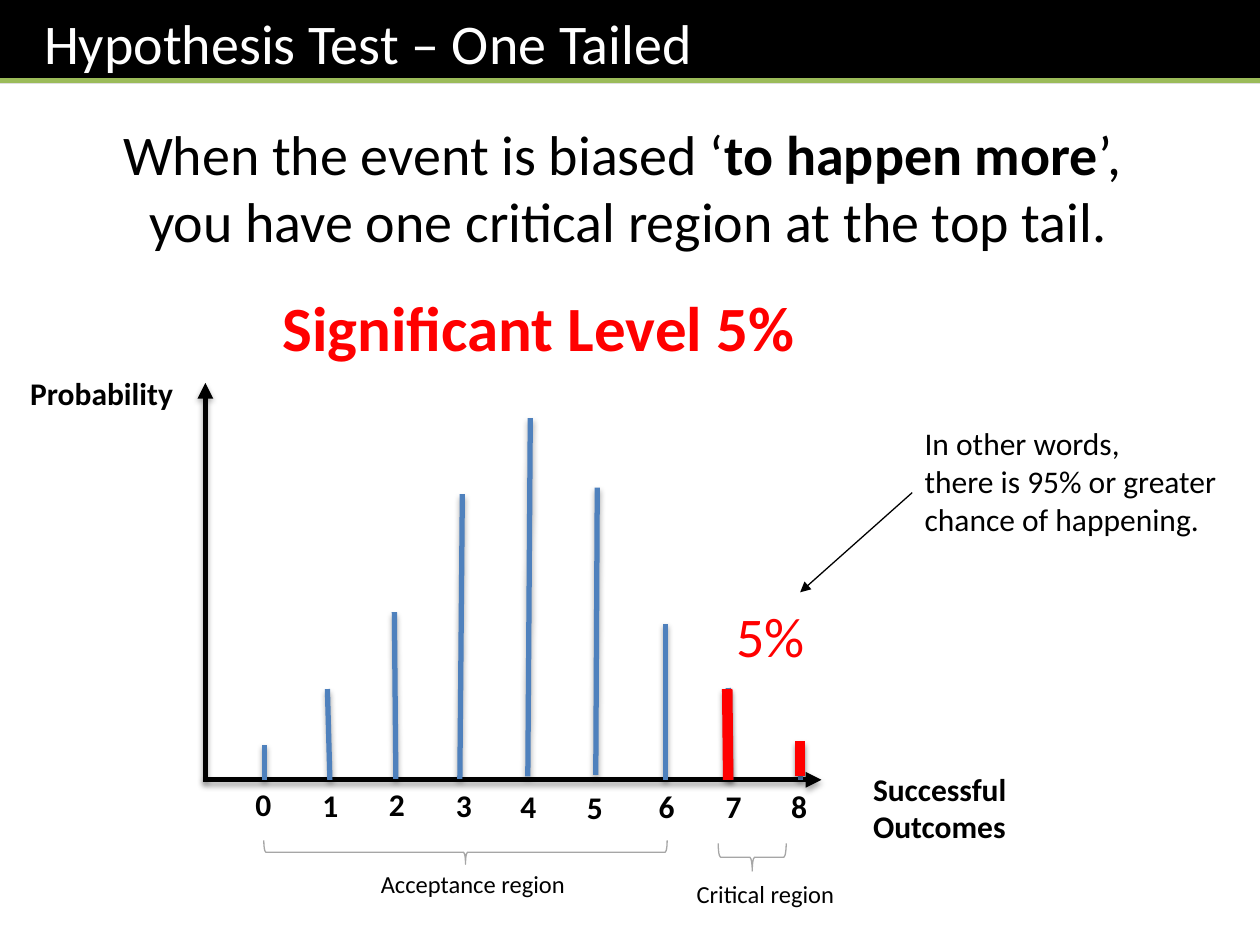
from lxml.etree import SubElement
from pptx import Presentation
from pptx.dml.color import RGBColor
from pptx.enum.shapes import MSO_CONNECTOR, MSO_SHAPE
from pptx.enum.text import MSO_ANCHOR, PP_ALIGN
from pptx.oxml.ns import qn
from pptx.util import Cm, Pt

THEME = {
    "font": "Calibri",
    "ink": "000000", "paper": "FFFFFF", "rule": "9BBB59",
    "stem": "4F81BD", "alarm": "FF0000", "brace": "A6A6A6",
    "head": 36, "lead": 32, "body": 18, "note": 14,
    "thick": 6, "line": 3, "thin": 0.75,
}

# Content: lengths in cm, a paragraph is a list of (text, bold) runs
TITLE = "Hypothesis Test – One Tailed"
LEAD = [
    [("When the event is biased ‘", False), ("to happen more", True), ("’, ", False)],
    [("you have one critical region at the top tail.", False)],
]
WORDS = [[("In other words,", False)],
         [("there is 95% or greater chance of happening.", False)]]

# Stems: foot x, foot y, top x, top y
STEMS = [
    (5.33, 15.72, 5.33, 15.01), (6.65, 15.72, 6.6, 13.89),
    (7.98, 15.7, 7.95, 12.34), (9.27, 15.7, 9.32, 9.96),
    (10.64, 15.65, 10.69, 8.43), (12.01, 15.62, 12.04, 9.83),
    (13.41, 15.72, 13.41, 12.57), (14.73, 15.72, 14.68, 13.87),
    (16.13, 15.72, 16.13, 15.01),
]
TAIL = [(14.68, 15.72, 14.66, 13.89), (16.13, 15.65, 16.13, 14.94)]
AXES = [(4.09, 15.72, 16.56, 15.72), (4.14, 15.72, 4.14, 7.72)]

# Outcome labels: left and top, in order from 0
MARKS = [(4.9, 15.7), (6.25, 15.72), (7.59, 15.7), (8.94, 15.72), (10.24, 15.75),
         (11.58, 15.77), (13.03, 15.75), (14.38, 15.75), (15.7, 15.75)]

# Regions: brace left, top, width, depth; label and its box
SPANS = [
    ((14.48, 17.0, 1.37, 0.56), "Critical region", (13.69, 17.6, 3.48, 0.86)),
    ((5.32, 16.94, 8.13, 0.48), "Acceptance region", (7.34, 17.4, 4.39, 0.86)),
]

deck = Presentation()
deck.slide_width, deck.slide_height = Cm(25.4), Cm(19.05)
slide = deck.slides.add_slide(deck.slide_layouts[6])
shapes = slide.shapes


def tint(name):
    return RGBColor.from_string(THEME[name])


def write(text, box=None, shape=None, size="body", color="ink", bold=False,
          align=PP_ALIGN.LEFT):
    """Put text in a new box, or in the given shape."""
    shape = shape or shapes.add_textbox(*map(Cm, box))
    frame = shape.text_frame
    frame.word_wrap = True
    paras = [[(text, bold)]] if isinstance(text, str) else text
    for i, runs in enumerate(paras):
        para = frame.add_paragraph() if i else frame.paragraphs[0]
        para.alignment = align
        for words, heavy in runs:
            run = para.add_run()
            run.text = words
            run.font.name = THEME["font"]
            run.font.size = Pt(THEME[size])
            run.font.bold = heavy
            run.font.color.rgb = tint(color)
    return shape


def draw(ends, color="ink", width="line", arrow=False, shade=True):
    """Draw a straight line, with an optional arrowhead and soft shadow."""
    line = shapes.add_connector(MSO_CONNECTOR.STRAIGHT, *map(Cm, ends))
    line.line.color.rgb = tint(color)
    line.line.width = Pt(THEME[width])
    if arrow:
        SubElement(line.line._get_or_add_ln(), qn("a:tailEnd"), type="triangle")
    fx = SubElement(line._element.spPr, qn("a:effectLst"))
    if shade:
        cast = SubElement(fx, qn("a:outerShdw"), blurRad="40000", dist="23000",
                          dir="5400000", rotWithShape="0")
        tone = SubElement(cast, qn("a:srgbClr"), val=THEME["ink"])
        SubElement(tone, qn("a:alpha"), val="35000")


def brace(left, top, width, depth):
    """Add a brace that points down, turned about its centre."""
    x, y = left + (width - depth) / 2, top + (depth - width) / 2
    mark = shapes.add_shape(MSO_SHAPE.LEFT_BRACE, Cm(x), Cm(y), Cm(depth), Cm(width))
    mark.rotation = 90
    mark._element.spPr.xfrm.set("flipH", "1")
    mark.shadow.inherit = False
    mark.fill.background()
    mark.line.color.rgb = tint("brace")
    mark.line.width = Pt(THEME["thin"])


# Title bar
bar = shapes.add_shape(MSO_SHAPE.RECTANGLE, 0, 0, Cm(25.4), Cm(1.68))
bar.shadow.inherit = False
bar.fill.solid()
bar.fill.fore_color.rgb = tint("ink")
bar.line.fill.background()
bar.text_frame.margin_left = Cm(0.89)
bar.text_frame.vertical_anchor = MSO_ANCHOR.MIDDLE
write(TITLE, shape=bar, size="lead", color="paper")
draw((0, 1.63, 25.4, 1.63), color="rule", shade=False)

# Graph: axes, stems and the critical tail
for ends in AXES:
    draw(ends, arrow=True)
for ends in STEMS:
    draw(ends, color="stem")
for ends in TAIL:
    draw(ends, color="alarm", width="thick")

# Regions below the axis
for span, name, box in SPANS:
    brace(*span)
    write(name, box, size="note", align=PP_ALIGN.CENTER)

# Outcome labels
for count, (left, top) in enumerate(MARKS):
    write(str(count), (left, top, 0.84, 1.04), bold=True)

# Headings and axis names
write(LEAD, (-0.03, 2.29, 25.4, 3.0), size="lead", align=PP_ALIGN.CENTER)
write("Significant Level 5%", (5.33, 5.69, 11.05, 1.8), size="head",
      color="alarm", bold=True, align=PP_ALIGN.CENTER)
write("5%", (13.87, 12.01, 3.33, 1.63), size="lead", color="alarm",
      align=PP_ALIGN.CENTER)
write("Probability", (0.36, 7.42, 3.48, 1.02), bold=True)
write("Successful Outcomes", (17.35, 15.39, 3.48, 1.8), bold=True)

# Remark with its arrow
draw((18.39, 9.93, 16.13, 11.94), width="thin", arrow=True, shade=False)
write(WORDS, (18.39, 8.43, 6.71, 2.57))

deck.save("out.pptx")
